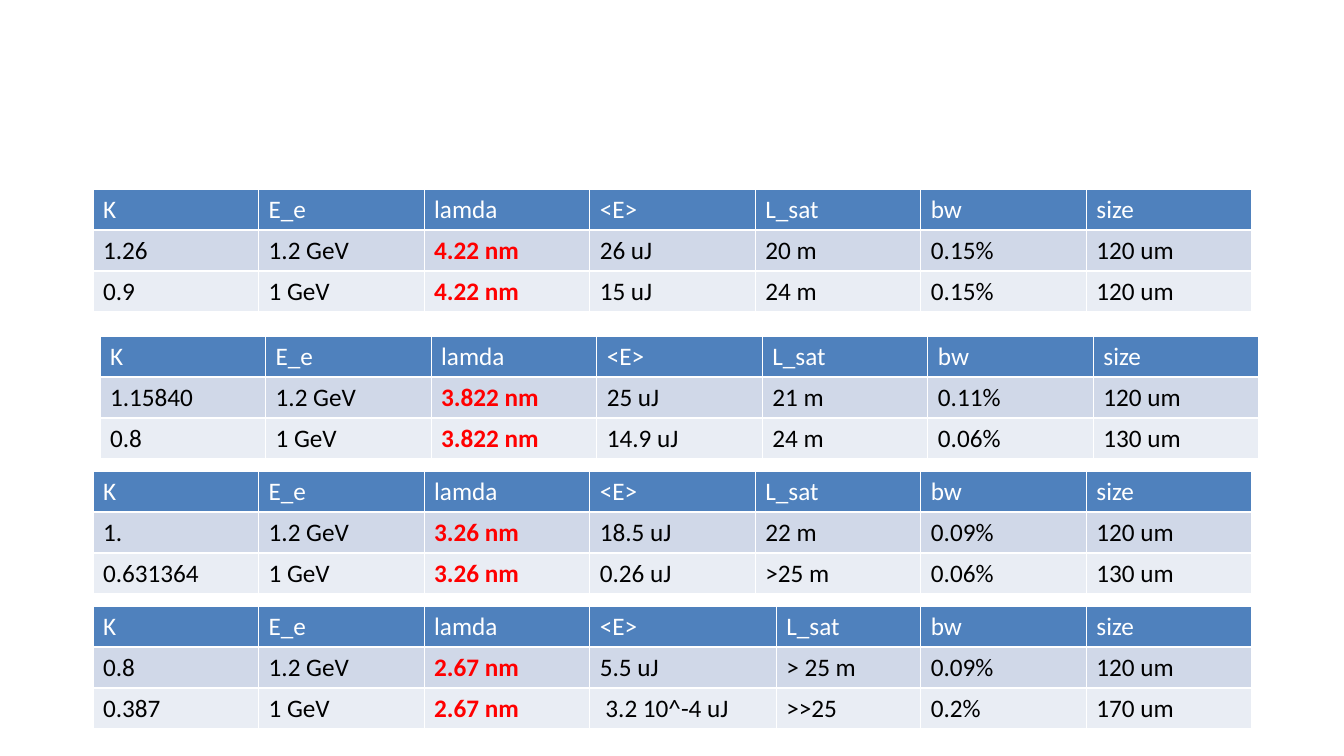
import pptx
import pptx.dml.color
import pptx.util

PX = 12192000 / 1344


def px(n):
    return pptx.util.Emu(round(n * PX))


def rgb(value):
    return pptx.dml.color.RGBColor.from_string(value)


class Deck:
    font = "Calibri"
    size = 18
    header_fill = "4F81BD"
    band_fills = ("D0D8E8", "E9EDF4")
    header_text = "FFFFFF"
    body_text = "000000"
    accent_text = "FF0000"

    def __init__(self, width, height):
        self.prs = pptx.Presentation()
        self.prs.slide_width = px(width)
        self.prs.slide_height = px(height)
        self.s = self.prs.slides.add_slide(self.prs.slide_layouts[6])

    def cell(self, cell, text, fill, color, bold):
        cell.fill.solid()
        cell.fill.fore_color.rgb = rgb(fill)
        cell.text_frame.text = text
        for r in cell.text_frame.paragraphs[0].runs:
            r.font.name = self.font
            r.font.size = pptx.util.Pt(self.size)
            r.font.bold = bold
            r.font.color.rgb = rgb(color)

    def table(self, left, top, width, row_height, rows, accent_column, widen=None):
        count = len(rows[0])
        sp = self.s.shapes.add_table(
            len(rows), count, px(left), px(top), px(width), px(row_height * len(rows)))
        table = sp.table
        for column in table.columns:
            column.width = px(width / count)
        if widen:
            index, extra = widen
            table.columns[index].width += px(extra)
            table.columns[index + 1].width -= px(extra)
        for i, row in enumerate(rows):
            table.rows[i].height = px(row_height)
            for j, text in enumerate(row):
                accent = i > 0 and j == accent_column
                if i == 0:
                    fill, color = self.header_fill, self.header_text
                else:
                    fill = self.band_fills[(i - 1) % 2]
                    color = self.accent_text if accent else self.body_text
                self.cell(table.cell(i, j), text, fill, color, accent)

    def save(self):
        self.prs.save("out.pptx")


HEADER = ("K", "E_e", "lamda", "<E>", "L_sat", "bw", "size")
ENERGIES = ("1.2 GeV", "1 GeV")
TABLES = (
    (93, 189, "4.22 nm", None,
     (("1.26", "26 uJ", "20 m", "0.15%", "120 um"),
      ("0.9", "15 uJ", "24 m", "0.15%", "120 um"))),
    (100, 336, "3.822 nm", None,
     (("1.15840", "25 uJ", "21 m", "0.11%", "120 um"),
      ("0.8", "14.9 uJ", "24 m", "0.06%", "130 um"))),
    (93, 471, "3.26 nm", None,
     (("1.", "18.5 uJ", "22 m", "0.09%", "120 um"),
      ("0.631364", "0.26 uJ", ">25 m", "0.06%", "130 um"))),
    (93, 606, "2.67 nm", (3, 21),
     (("0.8", "5.5 uJ", "> 25 m", "0.09%", "120 um"),
      ("0.387", " 3.2 10^-4 uJ", ">>25", "0.2%", "170 um"))),
)


def main():
    deck = Deck(1344, 756)
    for left, top, wavelength, widen, results in TABLES:
        rows = [HEADER]
        for energy, (k, *rest) in zip(ENERGIES, results):
            rows.append((k, energy, wavelength, *rest))
        deck.table(left, top, 1159, 41, rows, HEADER.index("lamda"), widen)
    deck.save()


if __name__ == "__main__":
    main()
